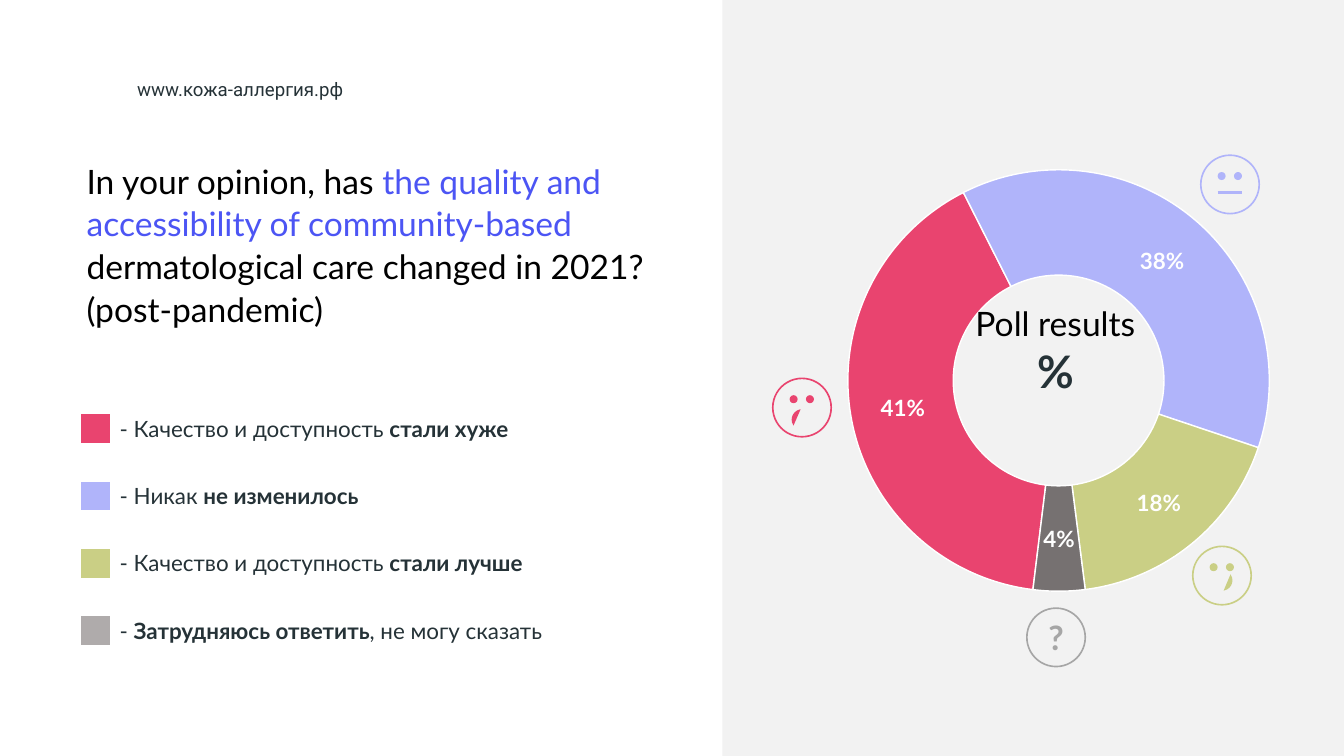
from typing import NamedTuple, Optional

from lxml import etree
from pptx import Presentation
from pptx.chart.data import CategoryChartData
from pptx.dml.color import RGBColor
from pptx.enum.chart import XL_CHART_TYPE
from pptx.enum.shapes import MSO_CONNECTOR, MSO_SHAPE
from pptx.enum.text import MSO_ANCHOR, MSO_AUTO_SIZE, PP_ALIGN
from pptx.oxml import parse_xml
from pptx.oxml.ns import nsdecls, qn
from pptx.util import Pt

DOUGHNUT = XL_CHART_TYPE.DOUGHNUT
STRAIGHT = MSO_CONNECTOR.STRAIGHT
RECTANGLE, CIRCLE, CHORD = MSO_SHAPE.RECTANGLE, MSO_SHAPE.FLOWCHART_CONNECTOR, MSO_SHAPE.CHORD
MIDDLE = MSO_ANCHOR.MIDDLE
CENTER = PP_ALIGN.CENTER
GROW = MSO_AUTO_SIZE.SHAPE_TO_FIT_TEXT

WHITE = RGBColor(0xFF, 0xFF, 0xFF)
BLACK = RGBColor(0, 0, 0)
INK = RGBColor(0x25, 0x32, 0x37)
PANEL = RGBColor(0xF2, 0xF2, 0xF2)
ACCENT = RGBColor(0x4C, 0x55, 0xF4)
ROSE = RGBColor(0xE9, 0x44, 0x6F)
LILAC = RGBColor(0xB0, 0xB4, 0xFA)
OLIVE = RGBColor(0xCA, 0xCF, 0x85)
PALE_GRAY = RGBColor(0xAF, 0xAB, 0xAB)
DARK_GRAY = RGBColor(0x76, 0x71, 0x71)
MID_GRAY = RGBColor(0xA6, 0xA6, 0xA6)

FACE_SIZE = 62.6
EYE_SIZE = 8.6
MOUTH_SIZE = 22.3
ROW_HEIGHT = 36


class Run(NamedTuple):
    text: str
    size: float = 24
    color: RGBColor = INK
    bold: bool = False
    font: str = "Lato"


class Answer(NamedTuple):
    swatch: RGBColor
    runs: list[Run]


class Face(NamedTuple):
    left: float
    top: float
    color: RGBColor
    mouth_top: Optional[float] = None  # None gives a straight mouth
    mouth_turn: float = 0


ANSWERS = [
    Answer(ROSE, [Run("- Качество и доступность "), Run("стали хуже", bold=True)]),
    Answer(LILAC, [Run("- Никак "), Run("не изменилось", bold=True)]),
    Answer(OLIVE, [Run("- Качество и доступность "), Run("стали лучше", bold=True)]),
    Answer(PALE_GRAY, [Run("- "), Run("Затрудняюсь ответить", bold=True),
                       Run(", не могу сказать")]),
]
SHARES = [(0.41, ROSE), (0.38, LILAC), (0.18, OLIVE), (0.04, DARK_GRAY)]
FACES = [
    Face(828, 405.4, ROSE, 33.1, 105.7),
    Face(1278, 585.4, OLIVE, 25.2, 285),
    Face(1286.6, 166.3, LILAC),
]


def write(paragraph, runs: list[Run]) -> None:
    for item in runs:
        run = paragraph.add_run()
        run.text = item.text
        run.font.name, run.font.size = item.font, Pt(item.size)
        run.font.bold, run.font.color.rgb = item.bold, item.color


def add_text(shapes, left: float, top: float, width: float, height: float):
    frame = shapes.add_textbox(Pt(left), Pt(top), Pt(width), Pt(height)).text_frame
    frame.word_wrap, frame.auto_size = True, GROW
    return frame


def add_shape(shapes, kind, left: float, top: float, width: float, height: float,
              fill: Optional[RGBColor] = None, line: Optional[RGBColor] = None):
    shape = shapes.add_shape(kind, Pt(left), Pt(top), Pt(width), Pt(height))
    shape.shadow.inherit = False
    if fill is None:
        shape.fill.background()
    else:
        shape.fill.solid()
        shape.fill.fore_color.rgb = fill
    if line is None:
        shape.line.fill.background()
    else:
        shape.line.color.rgb, shape.line.width = line, Pt(1.75)
    return shape


def add_face(shapes, face: Face) -> None:
    parts = shapes.add_group_shape().shapes
    left, top, color = face.left, face.top, face.color
    add_shape(parts, CIRCLE, left, top, FACE_SIZE, FACE_SIZE, line=color)
    for eye_left in (18, 35.5):
        add_shape(parts, CIRCLE, left + eye_left, top + 18, EYE_SIZE, EYE_SIZE, fill=color)
    if face.mouth_top is None:
        y = Pt(top + 40.3)
        mouth = parts.add_connector(STRAIGHT, Pt(left + 18), y, Pt(left + 44.6), y)
        mouth.line.color.rgb, mouth.line.width = color, Pt(3)
        etree.SubElement(mouth.line._get_or_add_ln().getparent(), qn("a:effectLst"))
    else:
        mouth = add_shape(parts, CHORD, left + 20.2, top + face.mouth_top,
                          MOUTH_SIZE, MOUTH_SIZE, fill=color)
        mouth.rotation = face.mouth_turn
        # Angles are stored in 60000ths of a degree, adjustments in 100000ths
        mouth.adjustments[0], mouth.adjustments[1] = 39.57 * 0.6, 156.14 * 0.6


def add_legend(shapes, answers: list[Answer]) -> None:
    rows = 2 * len(answers)
    table = shapes.add_table(rows, 2, Pt(84.2), Pt(441.4), Pt(594), Pt(rows * ROW_HEIGHT)).table
    table.first_row = table.horz_banding = False
    table.columns[0].width, table.columns[1].width = Pt(36.7), Pt(557.3)
    for row in table.rows:
        row.height = Pt(ROW_HEIGHT)
    for cell in table.iter_cells():
        cell.fill.background()
        properties = cell._tc.get_or_add_tcPr()
        for index, side in enumerate(("lnL", "lnR", "lnT", "lnB")):
            properties.insert(index, parse_xml(
                f'<a:{side} {nsdecls("a")} w="{Pt(6)}"><a:solidFill>'
                f'<a:srgbClr val="{WHITE}"/></a:solidFill></a:{side}>'))
    for index, answer in enumerate(answers):
        swatch, label = table.cell(2 * index, 0), table.cell(2 * index, 1)
        swatch.fill.solid()
        swatch.fill.fore_color.rgb = answer.swatch
        label.vertical_anchor = MIDDLE
        write(label.text_frame.paragraphs[0], answer.runs)


def add_poll_chart(shapes) -> None:
    data = CategoryChartData(number_format="0%")
    data.categories = [str(number + 1) for number in range(len(SHARES))]
    data.add_series("Series 1", [share for share, _ in SHARES])
    chart = shapes.add_chart(DOUGHNUT, Pt(851), Pt(164.9), Pt(809.3), Pt(494.6), data).chart
    chart.has_legend = chart.has_title = False
    chart.font.name, chart.font.size, chart.font.color.rgb = "Lato", Pt(10), INK
    plot = chart.plots[0]
    plot.vary_by_categories = True
    for index, (_, color) in enumerate(SHARES):
        sector = plot.series[0].points[index].format
        sector.fill.solid()
        sector.fill.fore_color.rgb = color
        sector.line.color.rgb, sector.line.width = WHITE, Pt(1.5)
    labels = plot.series[0].data_labels
    labels.show_value = True
    labels.number_format, labels.number_format_is_linked = "0%", False
    labels.font.name, labels.font.size = "Lato", Pt(24)
    labels.font.bold, labels.font.color.rgb = True, WHITE
    # Ring rotation, hole and plot area
    area = chart._chartSpace.chart.plotArea
    ring = area.find(qn("c:doughnutChart"))
    ring.find(qn("c:firstSliceAng")).set("val", "187")
    ring.find(qn("c:holeSize")).set("val", "78")
    for old in area.findall(qn("c:layout")):
        area.remove(old)
    settings = [("layoutTarget", "inner"), ("xMode", "edge"), ("yMode", "edge"),
                ("x", 0.071), ("y", 0.033), ("w", 0.558), ("h", 0.916)]
    layout = "".join(f'<c:{tag} val="{value}"/>' for tag, value in settings)
    area.insert(0, parse_xml(f'<c:layout {nsdecls("c")}><c:manualLayout>{layout}'
                             '</c:manualLayout></c:layout>'))


def main() -> None:
    deck = Presentation()
    deck.slide_width, deck.slide_height = Pt(1440), Pt(810)
    shapes = deck.slides.add_slide(deck.slide_layouts[6]).shapes

    # Site address and right panel
    site = add_text(shapes, 146.9, 85.7, 321, 21)
    site.margin_left = site.margin_top = site.margin_right = site.margin_bottom = 0
    site.paragraphs[0].line_spacing = Pt(21.2)
    write(site.paragraphs[0], [Run("www.кожа-аллергия.рф", 20, font="Roboto")])
    add_shape(shapes, RECTANGLE, 774, 0, 666, 810, fill=PANEL)

    # Question
    question = add_text(shapes, 85.7, 166.3, 676.8, 185).paragraphs[0]
    question.line_spacing = Pt(45.6)
    write(question, [
        Run("In your opinion, has ", 36, BLACK),
        Run("the quality and accessibility of community-based ", 36, ACCENT),
        Run("dermatological care changed in 2021? (post-pandemic)", 36, BLACK),
    ])

    # Answers, ring and mood icons
    add_legend(shapes, ANSWERS)
    add_poll_chart(shapes)
    for face in FACES:
        add_face(shapes, face)
    unsure = add_shape(shapes, CIRCLE, 1100.2, 651.6, FACE_SIZE, FACE_SIZE, line=MID_GRAY)
    unsure.text_frame.vertical_anchor = MIDDLE
    unsure.text_frame.paragraphs[0].alignment = CENTER
    write(unsure.text_frame.paragraphs[0], [Run("?", 36, MID_GRAY, True)])

    # Ring caption
    caption = add_text(shapes, 1013.8, 321.1, 234, 152.6)
    caption.add_paragraph()
    for paragraph, run in zip(caption.paragraphs,
                              [Run("Poll results", 36, BLACK), Run("%", 48, INK, True)]):
        paragraph.alignment = CENTER
        write(paragraph, [run])

    deck.save("out.pptx")


if __name__ == "__main__":
    main()
